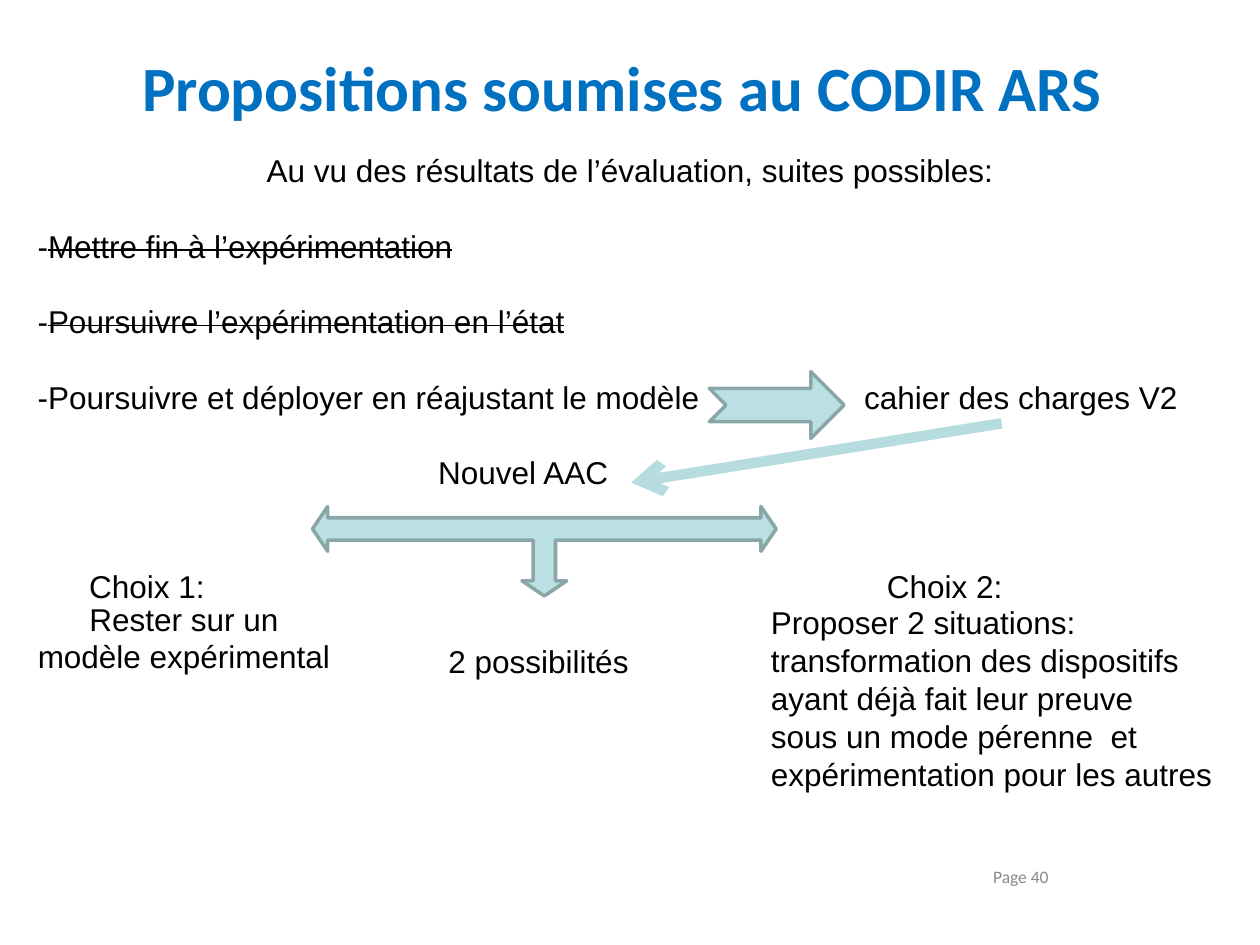
from lxml import etree
from pptx import Presentation
from pptx.dml.color import RGBColor
from pptx.enum.shapes import MSO_CONNECTOR, MSO_SHAPE
from pptx.enum.text import MSO_ANCHOR, PP_ALIGN
from pptx.oxml.ns import qn
from pptx.util import Inches, Pt

LEFT, CENTER, RIGHT = PP_ALIGN.LEFT, PP_ALIGN.CENTER, PP_ALIGN.RIGHT
TOP, MIDDLE = MSO_ANCHOR.TOP, MSO_ANCHOR.MIDDLE
BLACK, BLUE, GREY = "000000", "0070C0", "898989"
FILL, OUTLINE, ARROW = "BBE0E3", "8AA6A8", "B6DCDF"
LINE = 21.6  # body line pitch in points

TITLE = "Propositions soumises au CODIR ARS"
# Each row: blank lines before, alignment, tab stops in inches, (text, struck) runs
BODY = [
    (0, CENTER, [], [("Au vu des résultats de l’évaluation, suites possibles:", False)]),
    (1, LEFT, [], [("-", False), ("Mettre fin à l’expérimentation", True)]),
    (1, LEFT, [], [("-", False), ("Poursuivre l’expérimentation en l’état", True)]),
    (1, LEFT, [6.56], [("-Poursuivre et déployer en réajustant le modèle\tcahier des charges V2", False)]),
    (1, LEFT, [3.18], [("\tNouvel AAC", False)]),
    (2, LEFT, [0.41, 6.74], [("\tChoix 1:\tChoix 2:", False)]),
    (1, LEFT, [3.26], [("\t2 possibilités", False)]),
]
CHOICE_1 = ["Rester sur un modèle expérimental"]
CHOICE_2 = [
    "Proposer 2 situations: transformation des dispositifs ayant déjà fait leur preuve",
    "sous un mode pérenne  et expérimentation pour les autres",
]
PAGE = "Page 40"
BLOCK_ARROWS = [  # preset, box, rotation, adjustments
    (MSO_SHAPE.NOTCHED_RIGHT_ARROW, (5.63, 2.95, 1.07, 0.53), 0, []),
    (MSO_SHAPE.LEFT_RIGHT_UP_ARROW, (2.48, 4.02, 3.68, 0.71), 180, [0.25, 0.25, 0.17]),
]


def rgb(value):
    return RGBColor.from_string(value)


def add_box(slide, box, anchor=TOP):
    tf = slide.shapes.add_textbox(*map(Inches, box)).text_frame
    tf.word_wrap = True
    tf.vertical_anchor = anchor
    return tf


def next_paragraph(tf, first):
    return tf.paragraphs[0] if first else tf.add_paragraph()


def style(p, size=18, font="Arial", color=BLACK, bold=False, align=LEFT):
    p.alignment = align
    p.font.size, p.font.name, p.font.bold = Pt(size), font, bold
    p.font.color.rgb = rgb(color)


def add_tabs(p, stops):
    tabs = etree.SubElement(p._p.get_or_add_pPr(), qn("a:tabLst"))
    for stop in stops:
        etree.SubElement(tabs, qn("a:tab"), pos=str(Inches(stop)), algn="l")


def add_text(slide, box, lines, anchor=TOP, spacing=None, **font):
    tf = add_box(slide, box, anchor)
    for i, line in enumerate(lines):
        p = next_paragraph(tf, i == 0)
        p.text = line
        if spacing:
            p.line_spacing = Pt(spacing)
        style(p, **font)


def add_body(slide, box):
    tf = add_box(slide, box)
    for i, (gap, align, stops, runs) in enumerate(BODY):
        p = next_paragraph(tf, i == 0)
        p.line_spacing = Pt(LINE)
        if gap:
            p.space_before = Pt(gap * LINE)
        if stops:
            add_tabs(p, stops)
        for text, struck in runs:
            r = p.add_run()
            r.text = text
            if struck:
                r._r.get_or_add_rPr().set("strike", "sngStrike")
        style(p, align=align)


def add_block_arrow(slide, preset, box, rotation, adjustments):
    sp = slide.shapes.add_shape(preset, *map(Inches, box))
    sp.shadow.inherit = False
    sp.rotation = rotation
    for i, value in enumerate(adjustments):
        sp.adjustments[i] = value
    sp.fill.solid()
    sp.fill.fore_color.rgb = rgb(FILL)
    sp.line.color.rgb = rgb(OUTLINE)
    sp.line.width = Pt(2)


def add_line_arrow(slide, start, end):
    line = slide.shapes.add_connector(MSO_CONNECTOR.STRAIGHT, *map(Inches, start + end))
    line.line.color.rgb = rgb(ARROW)
    line.line.width = Pt(6)
    etree.SubElement(line.line._get_or_add_ln(), qn("a:tailEnd"), type="arrow")
    etree.SubElement(line._element.spPr, qn("a:effectLst"))


def main():
    prs = Presentation()
    prs.slide_width, prs.slide_height = Inches(10), Inches(7.5)
    slide = prs.slides.add_slide(prs.slide_layouts[6])
    add_text(slide, (0.44, 0.3, 9, 0.77), [TITLE], MIDDLE,
             size=36, font="Calibri", color=BLUE, bold=True, align=CENTER)
    add_body(slide, (0.2, 1.15, 9.6, 4.04))
    for arrow in BLOCK_ARROWS:
        add_block_arrow(slide, *arrow)
    add_line_arrow(slide, (7.95, 3.36), (5.01, 3.83))
    add_text(slide, (0.2, 4.71, 2.52, 0.71), CHOICE_1, spacing=LINE, align=CENTER)
    add_text(slide, (6.02, 4.74, 3.78, 1.62), CHOICE_2, spacing=LINE)
    add_text(slide, (7.28, 6.82, 1.14, 0.29), [PAGE],
             size=10, font="Calibri", color=GREY, align=RIGHT)
    prs.save("out.pptx")


if __name__ == "__main__":
    main()
